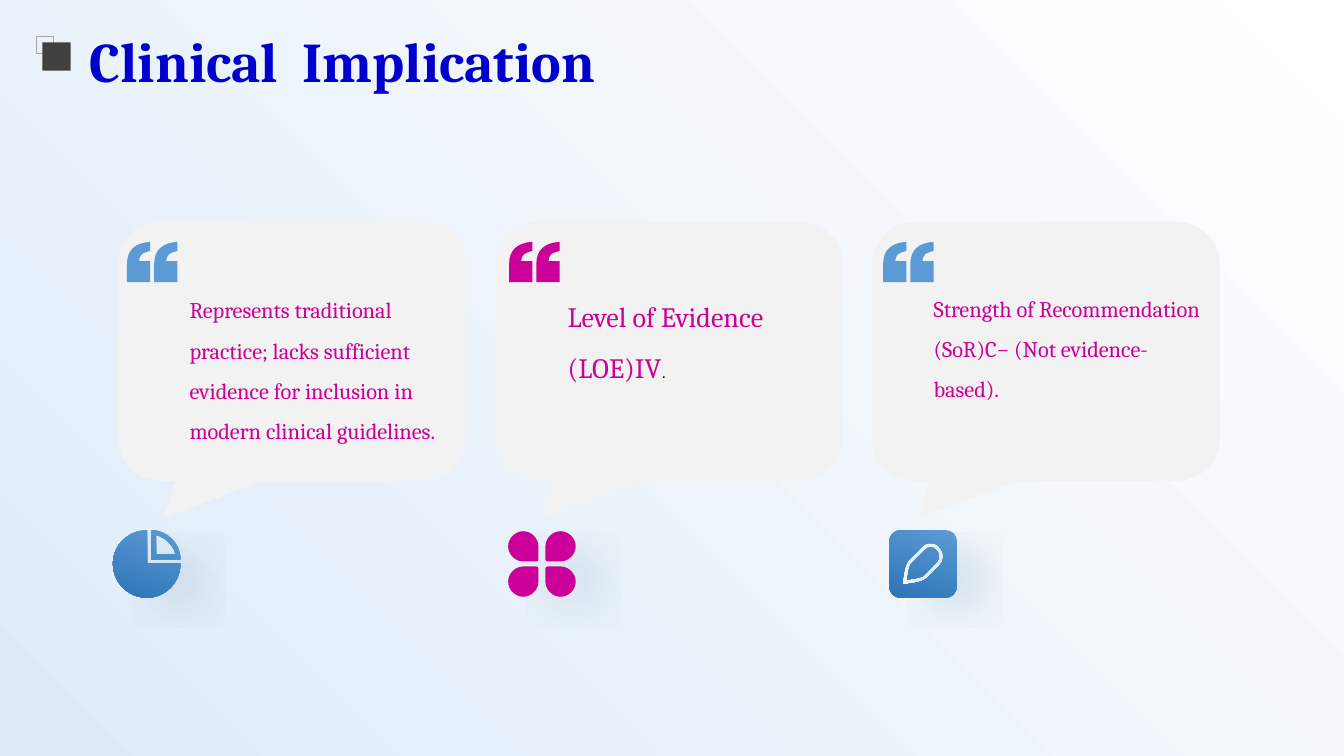
import dataclasses
import lxml.etree
import pptx
import pptx.dml.color
import pptx.enum.shapes
import pptx.enum.text
import pptx.oxml.ns
import pptx.util

Inches = pptx.util.Inches
Pt = pptx.util.Pt
RGBColor = pptx.dml.color.RGBColor
Shape = pptx.enum.shapes.MSO_SHAPE
qn = pptx.oxml.ns.qn

WHITE = RGBColor(0xFF, 0xFF, 0xFF)
PALE_BLUE = RGBColor(0xDE, 0xEB, 0xF7)
LIGHT_GREY = RGBColor(0xF2, 0xF2, 0xF2)
MID_GREY = RGBColor(0xA6, 0xA6, 0xA6)
DARK_GREY = RGBColor(0x40, 0x40, 0x40)
BLACK = RGBColor(0, 0, 0)
TITLE_BLUE = RGBColor(0, 0, 0xCC)
MAGENTA = RGBColor(0xCC, 0, 0x99)
BLUE = RGBColor(0x5B, 0x9B, 0xD5)
DEEP_BLUE = RGBColor(0x2E, 0x75, 0xB6)
SHADOW_BLUE = RGBColor(0x1F, 0x4E, 0x79)

# A contour is a start point, then lines (x, y) and curves (x1, y1, x2, y2, x, y), in inches.
QUOTE_MARK = [(.23, 0), (.23, .09), (.19, .1, .17, .11, .15, .12), (.13, .14, .12, .16, .12, .19),
              (.23, .19), (.23, .4), (0, .4), (0, .22), (0, .08, .08, .01, .23, 0)]
PETAL = [(.28, .3), (.15, .3), (.07, .3, 0, .23, 0, .15), (0, .07, .07, 0, .15, 0),
         (.23, 0, .3, .07, .3, .15), (.3, .28), (.3, .29, .29, .3, .28, .3)]
PIE = [
    [(.43, .05), (.43, .24), (.62, .24), (.62, .23, .61, .21, .61, .2), (.59, .17, .58, .14, .55, .12),
     (.53, .1, .51, .08, .48, .07), (.46, .06, .45, .05, .43, .05)],
    [(.38, 0), (.54, 0, .67, .13, .67, .29), (.38, .29)],
    [(.34, 0), (.34, .33), (.67, .33), (.67, .52, .52, .67, .34, .67),
     (.15, .67, 0, .52, 0, .33), (0, .15, .15, 0, .34, 0)],
]
PENCIL = [
    [(.41, .17), (.43, .17, .45, .18, .47, .2), (.5, .23, .5, .29, .47, .32), (.34, .45),
     (.32, .47, .25, .48, .18, .49), (.19, .42, .2, .35, .22, .33), (.35, .2), (.37, .18, .39, .17, .41, .17)],
    [(.41, .13), (.38, .13, .34, .14, .32, .17), (.19, .3), (.14, .35, .13, .54, .13, .54),
     (.13, .54, .32, .53, .37, .48), (.5, .35), (.55, .3, .55, .22, .5, .17), (.48, .14, .44, .13, .41, .13)],
    [(.11, 0), (.56, 0), (.62, 0, .67, .05, .67, .11), (.67, .56), (.67, .62, .62, .67, .56, .67),
     (.11, .67), (.05, .67, 0, .62, 0, .56), (0, .11), (0, .05, .05, 0, .11, 0)],
]


def mapped(contour, scale_x=1, scale_y=1, move_x=0, move_y=0):
    """Scale, then move, every coordinate pair of a contour."""
    return [tuple(value * scale_y + move_y if index % 2 else value * scale_x + move_x
                  for index, value in enumerate(step)) for step in contour]


QUOTES = [mapped(QUOTE_MARK, move_x=shift) for shift in (.27, 0)]
PETALS = [mapped(PETAL, sx, sy, .67 * (sx < 0), .65 * (sy < 0)) for sy in (1, -1) for sx in (1, -1)]


@dataclasses.dataclass
class Card:
    runs: list
    text_box: tuple  # left, top, width, height from the callout corner
    quote_left: float
    icon: list
    icon_left: float
    icon_top: float
    colour: RGBColor
    shaded: bool


CARDS = [
    Card([("Represents traditional practice; lacks sufficient evidence for inclusion in modern clinical guidelines.",
           16, "Cambria", MAGENTA)], (.71, .61, 2.53, 1.34), .09, PIE, -.05, 3.06, BLUE, True),
    Card([("Level of Evidence (LOE)IV", 20, "Cambria", MAGENTA), (".", 14, "Manrope", BLACK)],
         (.72, .61, 2.51, 1.34), .14, PETALS, .13, 3.07, MAGENTA, False),
    Card([("Strength of Recommendation (SoR)C− (Not evidence- based).", 16, "Cambria", MAGENTA)],
         (.61, .59, 2.68, 1.53), .11, PENCIL, .17, 3.06, BLUE, True),
]


def paint_gradient(shape, first, last, angle):
    shape.fill.gradient()
    shape.fill.gradient_angle = angle
    for stop, colour, position in zip(shape.fill.gradient_stops, (first, last), (0, 1)):
        stop.color.rgb = colour
        stop.position = position


def add_plain_shape(page, kind, left, top, width, height, fill=None, line=None):
    shape = page.shapes.add_shape(kind, Inches(left), Inches(top), Inches(width), Inches(height))
    shape.shadow.inherit = False
    if fill is None:
        shape.fill.background()
    else:
        shape.fill.solid()
        shape.fill.fore_color.rgb = fill
    if line is None:
        shape.line.fill.background()
    else:
        shape.line.color.rgb = line
        shape.line.width = Pt(1)
    return shape


def bend_segments(shape, steps):
    """Swap straight segments for cubic curves where the step has control points."""
    segments = list(shape.element.spPr.iter(qn("a:lnTo")))
    for segment, step in zip(segments, steps):
        if len(step) == 2:
            continue
        curve = lxml.etree.Element(qn("a:cubicBezTo"))
        for x, y in zip(step[::2], step[1::2]):
            lxml.etree.SubElement(curve, qn("a:pt"), x=str(Inches(x) - shape.left), y=str(Inches(y) - shape.top))
        segment.getparent().replace(segment, curve)


def add_outline(page, contours, left, top, colour):
    placed = [mapped(contour, move_x=left, move_y=top) for contour in contours]
    corners = [[(Inches(step[-2]), Inches(step[-1])) for step in contour] for contour in placed]
    builder = page.shapes.build_freeform(*corners[0][0])
    for index, points in enumerate(corners):
        if index:
            builder.move_to(*points[0])
        builder.add_line_segments(points[1:], close=True)
    shape = builder.convert_to_shape()
    bend_segments(shape, [step for contour in placed for step in contour[1:]])
    shape.shadow.inherit = False
    shape.fill.solid()
    shape.fill.fore_color.rgb = colour
    shape.line.fill.background()
    return shape


def add_soft_shadow(shape):
    effects = shape.element.spPr.find(qn("a:effectLst"))
    shadow = lxml.etree.SubElement(effects, qn("a:outerShdw"), blurRad=str(Pt(40)), dist=str(Pt(34)),
                                   dir=str(359 * 60000), sx="52000", sy="52000", algn="bl", rotWithShape="0")
    colour = lxml.etree.SubElement(shadow, qn("a:srgbClr"), val=str(SHADOW_BLUE))
    lxml.etree.SubElement(colour, qn("a:alpha"), val="40000")


def write_text(box, runs, line_spacing, anchor, bold=False):
    frame = box.text_frame
    frame.word_wrap = True
    frame.auto_size = pptx.enum.text.MSO_AUTO_SIZE.NONE
    frame.vertical_anchor = anchor
    frame.margin_left = frame.margin_right = frame.margin_top = frame.margin_bottom = 0
    para = frame.paragraphs[0]
    para.alignment = pptx.enum.text.PP_ALIGN.LEFT
    para.line_spacing = line_spacing
    for text, size, font, colour in runs:
        span = para.add_run()
        span.text = text
        span.font.size = Pt(size)
        span.font.name = font
        span.font.bold = bold
        span.font.color.rgb = colour


def add_backdrop(page, width, height):
    backdrop = add_plain_shape(page, Shape.RECTANGLE, 0, 0, width, height, WHITE)
    paint_gradient(backdrop, WHITE, PALE_BLUE, 225)
    page.shapes.title.element.addprevious(backdrop.element)


def add_heading(page, left, top):
    add_plain_shape(page, Shape.RECTANGLE, left, top, .17, .17, line=MID_GREY)
    add_plain_shape(page, Shape.RECTANGLE, left + .06, top + .06, .28, .28, DARK_GREY)
    title = page.shapes.title
    title.left, title.top = Inches(left + .53), Inches(top - .07)
    title.width, title.height = Inches(11.9), Inches(.47)
    write_text(title, [("Clinical  Implication", 40, "Cambria", TITLE_BLUE)], 1.2,
               pptx.enum.text.MSO_ANCHOR.MIDDLE, bold=True)


def add_card(page, card, left, top, width, height):
    callout = add_plain_shape(page, Shape.ROUNDED_RECTANGULAR_CALLOUT, left, top, width, height, LIGHT_GREY)
    for index, value in enumerate((-.368, .644, .167)):
        callout.adjustments[index] = value
    text_left, text_top, text_width, text_height = card.text_box
    box = page.shapes.add_textbox(Inches(left + text_left), Inches(top + text_top),
                                  Inches(text_width), Inches(text_height))
    write_text(box, card.runs, 1.5, pptx.enum.text.MSO_ANCHOR.TOP)
    add_outline(page, QUOTES, left + card.quote_left, top + .2, card.colour)
    icon = add_outline(page, card.icon, left + card.icon_left, top + card.icon_top, card.colour)
    if card.shaded:
        paint_gradient(icon, BLUE, DEEP_BLUE, 250)
    add_soft_shadow(icon)


def main():
    deck = pptx.Presentation()
    deck.slide_width, deck.slide_height = Inches(13.33), Inches(7.5)
    page = deck.slides.add_slide(deck.slide_layouts.get_by_name("Title Only"))
    add_backdrop(page, 13.33, 7.5)
    add_heading(page, .36, .36)
    for index, card in enumerate(CARDS):
        add_card(page, card, 1.17 + 3.74 * index, 2.2, 3.45, 2.57)
    deck.save("out.pptx")


if __name__ == "__main__":
    main()
